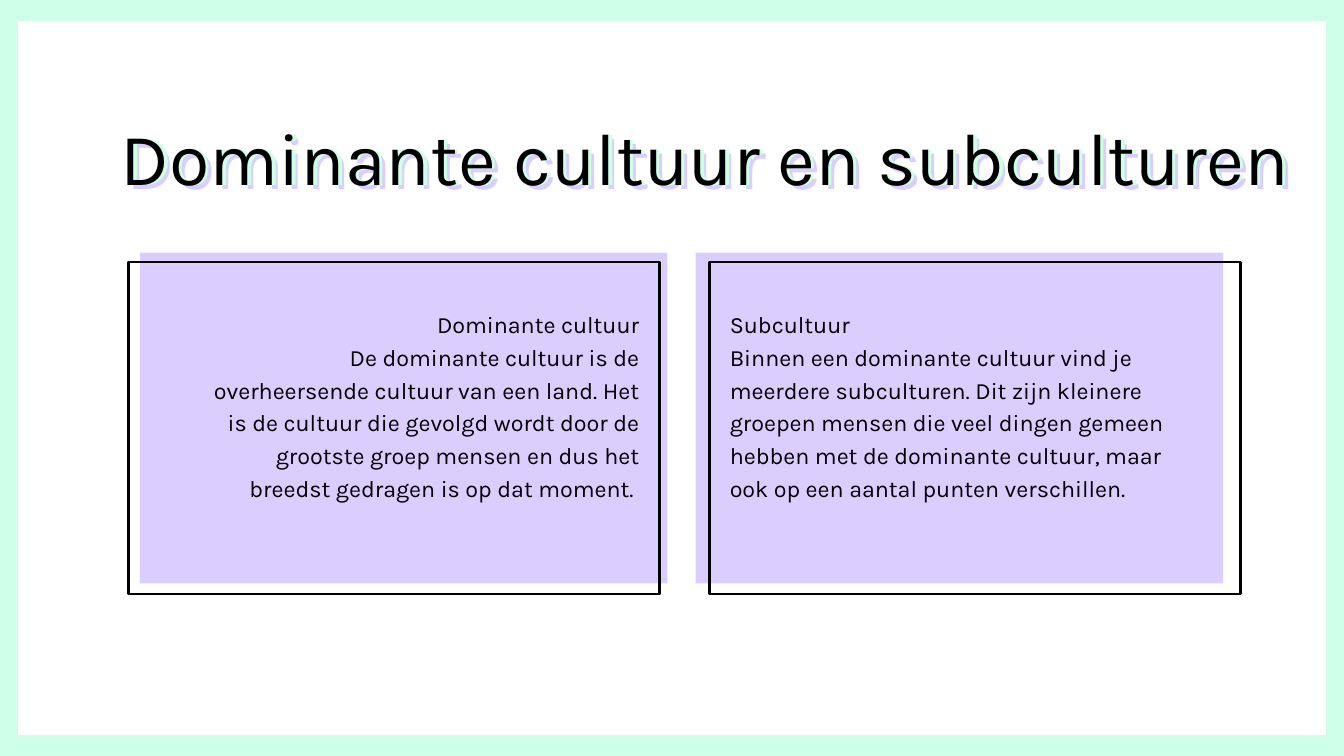
import pptx
import pptx.util
import pptx.dml.color
import pptx.enum.shapes
import pptx.enum.text
from lxml import etree

Inches, Pt = pptx.util.Inches, pptx.util.Pt
RGB = pptx.dml.color.RGBColor
ALIGN = pptx.enum.text.PP_ALIGN
COLORS = {"ink": "000000", "lilac": "DCCDFF", "mint": "CEFFE8"}
TITLE = "Dominante cultuur en subculturen"


def place(shape, box):
    for name, val in zip(("left", "top", "width", "height"), box):
        setattr(shape, name, Inches(val))


def rect(slide, box, fill=None, line=None, width=3):
    kind = pptx.enum.shapes.MSO_SHAPE.RECTANGLE
    shape = slide.shapes.add_shape(kind, *map(Inches, box))
    shape.shadow.inherit = False
    if fill:
        shape.fill.solid()
        shape.fill.fore_color.rgb = RGB.from_string(COLORS[fill])
    else:
        shape.fill.background()
    if line:
        shape.line.color.rgb = RGB.from_string(COLORS[line])
        shape.line.width = Pt(width)
    else:
        shape.line.fill.background()


def write(shape, lines, size, space, color="ink", align=ALIGN.LEFT):
    """Fill a text shape with plain, unbulleted paragraphs."""
    frame = shape.text_frame
    look = {"word_wrap": True, "auto_size": pptx.enum.text.MSO_AUTO_SIZE.NONE,
            "vertical_anchor": pptx.enum.text.MSO_ANCHOR.TOP,
            "margin_left": 0, "margin_top": 0,
            "margin_right": 0, "margin_bottom": 0}
    for name, val in look.items():
        setattr(frame, name, val)
    frame.text = "\n".join(lines)
    for para in frame.paragraphs:
        props = para._p.get_or_add_pPr()
        props.set("marL", "0")
        props.set("indent", "0")
        etree.SubElement(props, pptx.oxml.ns.qn("a:buNone"))
        form = {"alignment": align, "line_spacing": Pt(space),
                "space_before": Pt(0), "space_after": Pt(0)}
        for name, val in form.items():
            setattr(para, name, val)
        for run in para.runs:
            font = {"name": "Karla", "size": Pt(size), "bold": False}
            for name, val in font.items():
                setattr(run.font, name, val)
            run.font.color.rgb = RGB.from_string(COLORS[color])


def raise_top(shape):
    """Bring a placeholder in front of what is drawn so far."""
    shape.element.getparent().append(shape.element)


def heading(slide, box):
    """Title with two coloured echoes behind it."""
    left, top, width, height = box
    for dx, dy, color in ((0.09, 0.06, "lilac"), (0.05, 0, "mint")):
        spot = (left + dx, top + dy, width, height)
        echo = slide.shapes.add_textbox(*map(Inches, spot))
        write(echo, [TITLE], 79, 94.8, color)
    title = slide.shapes.title
    place(title, box)
    write(title, [TITLE], 79, 94.8)
    raise_top(title)


def card(slide, body, box, shift, inset, lines, align):
    """Outlined box over an offset lilac panel, with text between."""
    left, top, width, height = box
    rect(slide, (left + shift, top - 0.14, 7.85, 4.92), fill="lilac")
    place(body, (left + inset, top + 0.65, 6.62, height - 0.8))
    write(body, lines, 25, 35, align=align)
    raise_top(body)
    rect(slide, box, line="ink")


def main():
    deck = pptx.Presentation()
    deck.slide_width, deck.slide_height = Inches(20), Inches(11.25)
    slide = deck.slides.add_slide(deck.slide_layouts[3])
    first, second = list(slide.placeholders)[1:]
    heading(slide, (1.8, 1.67, 18, 1.31))
    card(slide, first, (1.91, 3.9, 7.9, 4.94), 0.17, 0.98, [
        "Dominante cultuur",
        "De dominante cultuur is de overheersende cultuur van een land. "
        "Het is de cultuur die gevolgd wordt door de grootste groep mensen "
        "en dus het breedst gedragen is op dat moment. "], ALIGN.RIGHT)
    card(slide, second, (10.56, 3.9, 7.9, 4.94), -0.21, 0.3, [
        "Subcultuur",
        "Binnen een dominante cultuur vind je meerdere subculturen. "
        "Dit zijn kleinere groepen mensen die veel dingen gemeen hebben "
        "met de dominante cultuur, maar ook op een aantal punten "
        "verschillen."], ALIGN.LEFT)
    rect(slide, (0.08, 0.12, 19.84, 11), line="mint", width=27)
    deck.save("out.pptx")


if __name__ == "__main__":
    main()
